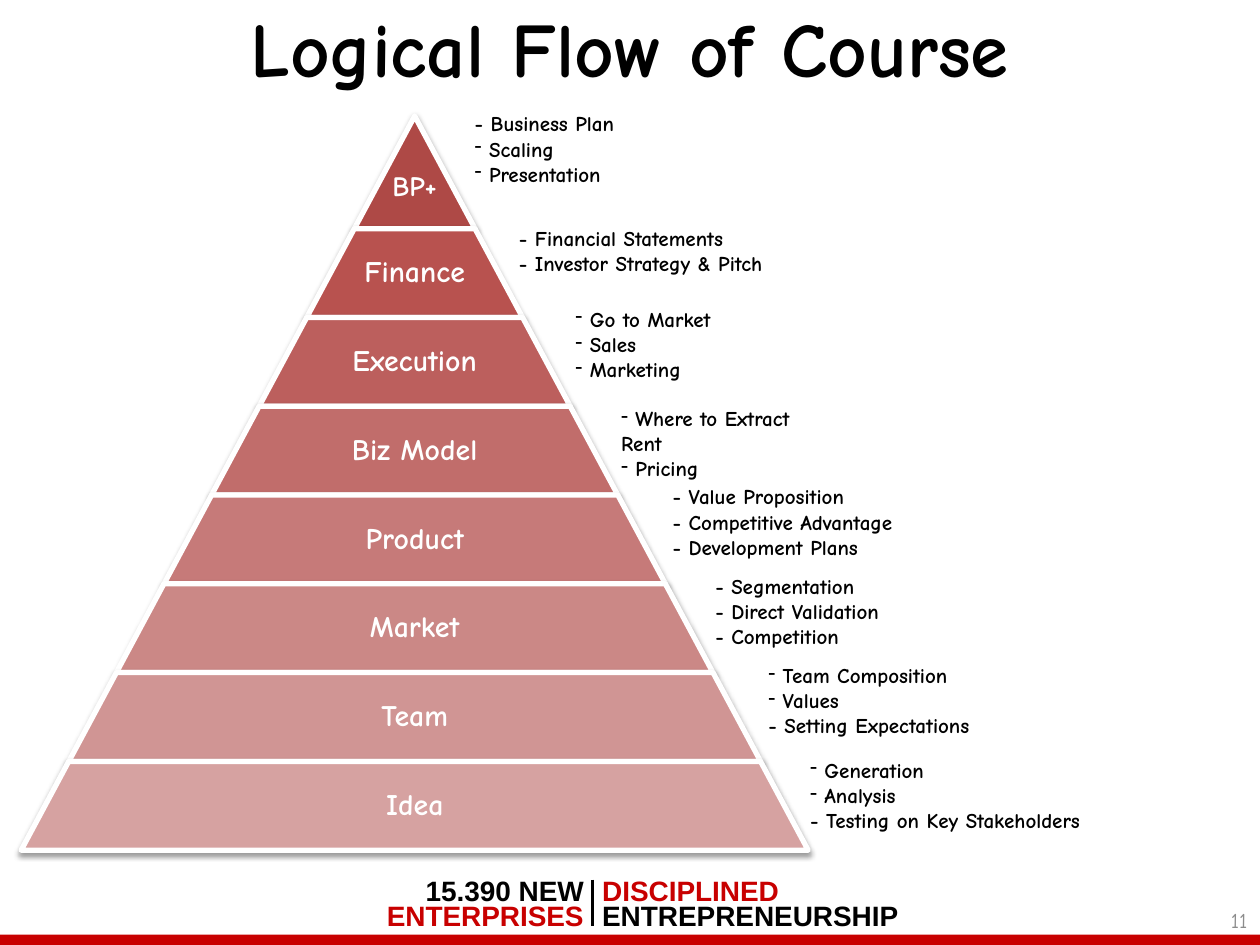
"""Build the course flow slide: a pyramid of eight stages with topic notes."""
import pptx
import pptx.dml.color
import pptx.enum.shapes
import pptx.enum.text
import pptx.oxml
import pptx.oxml.ns
import pptx.util
from lxml import etree

Cm = pptx.util.Cm
Pt = pptx.util.Pt
RGBColor = pptx.dml.color.RGBColor
Align = pptx.enum.text.PP_ALIGN
Anchor = pptx.enum.text.MSO_ANCHOR
Shape = pptx.enum.shapes.MSO_SHAPE
qn = pptx.oxml.ns.qn

BLACK = RGBColor(0x00, 0x00, 0x00)
WHITE = RGBColor(0xFF, 0xFF, 0xFF)
RED = RGBColor(0xC8, 0x00, 0x00)
GREY = RGBColor(0x8C, 0x8C, 0x8C)
TIER_COLORS = [
    RGBColor(0xAE, 0x49, 0x46), RGBColor(0xB8, 0x52, 0x4F),
    RGBColor(0xBC, 0x5F, 0x5D), RGBColor(0xC1, 0x6D, 0x6B),
    RGBColor(0xC6, 0x7A, 0x79), RGBColor(0xCB, 0x88, 0x86),
    RGBColor(0xD0, 0x95, 0x94), RGBColor(0xD6, 0xA2, 0xA1),
]

CENTER, APEX, TIP_HEIGHT, TIER_HEIGHT, SLOPE = 8.36, 2.34, 2.27, 1.79, 0.536

STAGES = [
    ("BP+", (9.32, 2.11, 3.86),
     ["- Business Plan", " Scaling", " Presentation"]),
    ("Finance", (10.21, 4.42, 6.15),
     ["- Financial Statements", "- Investor Strategy & Pitch"]),
    ("Execution", (11.35, 6.05, 5.08),
     [" Go to Market", " Sales", " Marketing"]),
    ("Biz Model", (12.27, 8.05, 4.65),
     [" Where to Extract Rent", " Pricing"]),
    ("Product", (13.31, 9.63, 8.05),
     ["- Value Proposition", "- Competitive Advantage", "- Development Plans"]),
    ("Market", (14.17, 11.43, 5.26),
     ["- Segmentation", "- Direct Validation", "- Competition"]),
    ("Team", (15.24, 13.23, 4.93),
     [" Team Composition", " Values", "- Setting Expectations"]),
    ("Idea", (16.08, 15.14, 6.55),
     [" Generation", " Analysis", "- Testing on Key Stakeholders"]),
]

FOOTER = [
    ("15.390 NEW", 7.42, 17.48, 4.6, Align.RIGHT, BLACK),
    ("ENTERPRISES", 7.42, 17.98, 4.6, Align.RIGHT, RED),
    ("DISCIPLINED", 11.89, 17.48, 6.78, Align.LEFT, RED),
    ("ENTREPRENEURSHIP", 11.89, 17.98, 6.78, Align.LEFT, BLACK),
]


def write(paragraph, text, size=12, color=BLACK, bold=True, font="Comic Neue",
          align=Align.LEFT, spacing=None):
    """Write text into a paragraph; a leading space calls for a dash bullet."""
    if text.startswith(" "):
        properties = paragraph._p.get_or_add_pPr()
        properties.set("marL", "0")
        properties.set("indent", "0")
        etree.SubElement(properties, qn("a:buChar")).set("char", "-")
    paragraph.alignment = align
    if spacing:
        paragraph.line_spacing = spacing
    run = paragraph.add_run()
    run.text = text
    run.font.name = font
    run.font.size = Pt(size)
    run.font.bold = bold
    run.font.color.rgb = color


class SlideBuilder:
    """Hold the current slide and draw its elements, with lengths in cm."""

    def __init__(self, slide):
        """Keep the slide to draw on."""
        self.slide = slide

    def title(self, text, left, top, width, height):
        """Place and fill the title placeholder."""
        shape = self.slide.shapes.title
        shape.left, shape.top = Cm(left), Cm(top)
        shape.width, shape.height = Cm(width), Cm(height)
        shape.text_frame.vertical_anchor = Anchor.MIDDLE
        write(shape.text_frame.paragraphs[0], text, size=44, align=Align.CENTER)

    def text(self, lines, left, top, width, height, anchor=Anchor.TOP,
             margin=None, **style):
        """Add a wrapping text box with one paragraph a line."""
        shape = self.slide.shapes.add_textbox(
            Cm(left), Cm(top), Cm(width), Cm(height))
        frame = shape.text_frame
        frame.word_wrap = True
        frame.vertical_anchor = anchor
        if margin is not None:
            frame.margin_left = frame.margin_right = Cm(margin)
            frame.margin_top = frame.margin_bottom = Cm(margin)
        for index, line in enumerate(lines):
            paragraph = frame.add_paragraph() if index else frame.paragraphs[0]
            write(paragraph, line, **style)

    def shape(self, kind, left, top, width, height, fill):
        """Add a filled shape without line or shadow."""
        shape = self.slide.shapes.add_shape(
            kind, Cm(left), Cm(top), Cm(width), Cm(height))
        shape.shadow.inherit = False
        shape.fill.solid()
        shape.fill.fore_color.rgb = fill
        shape.line.fill.background()
        return shape

    def tier(self, left, top, width, height, fill):
        """Add a white-edged trapezoid with a soft shadow below."""
        shape = self.shape(Shape.TRAPEZOID, left, top, width, height, fill)
        shape.adjustments[0] = SLOPE
        shape.line.color.rgb = WHITE
        shape.line.width = Pt(3)
        effects = shape._element.spPr.find(qn("a:effectLst"))
        shadow = etree.SubElement(
            effects, qn("a:outerShdw"), blurRad="40000", dist="20000",
            dir="5400000", rotWithShape="0")
        color = etree.SubElement(shadow, qn("a:srgbClr"), val="000000")
        etree.SubElement(color, qn("a:alpha"), val="38000")

    def line(self, start_x, start_y, end_x, end_y):
        """Add a plain black line."""
        connector = self.slide.shapes.add_connector(
            pptx.enum.shapes.MSO_CONNECTOR.STRAIGHT,
            Cm(start_x), Cm(start_y), Cm(end_x), Cm(end_y))
        connector.line.color.rgb = BLACK
        connector.line.width = Pt(1.5)
        etree.SubElement(connector._element.spPr, qn("a:effectLst"))


def draw_pyramid(builder):
    """Stack the tiers from the apex down, each with its label and notes."""
    top = APEX
    for index, (label, _, _) in enumerate(STAGES):
        height = TIER_HEIGHT if index else TIP_HEIGHT
        width = 2 * SLOPE * (top + height - APEX)
        builder.tier(CENTER - width / 2, top, width, height, TIER_COLORS[index])
        label_width = width * 0.65 if index else width
        drop = 0 if index else 0.6
        builder.text([label], CENTER - label_width / 2, top + drop, label_width,
                     height - drop, anchor=Anchor.MIDDLE, margin=0.05,
                     size=17 if index else 16, color=WHITE,
                     align=Align.CENTER, spacing=0.9)
        top += height
    for _, (left, note_top, width), notes in STAGES:
        builder.text(notes, left, note_top, width, 1.8)


def main():
    """Build and save the slide."""
    presentation = pptx.Presentation()
    presentation.slide_width, presentation.slide_height = Cm(25.4), Cm(19.05)
    slide = presentation.slides.add_slide(presentation.slide_layouts[5])
    builder = SlideBuilder(slide)
    builder.shape(Shape.RECTANGLE, 0, 18.84, 25.4, 0.21, RED)
    for text, left, top, width, align, color in FOOTER:
        builder.text([text], left, top, width, 0.94, size=16, font="Arial",
                     align=align, color=color)
    builder.line(11.94, 17.73, 11.94, 18.67)
    builder.title("Logical Flow of Course", 1.27, -0.64, 22.86, 3.18)
    builder.text(["11"], 19.48, 18.05, 5.92, 1, anchor=Anchor.MIDDLE,
                 color=GREY, bold=False, align=Align.RIGHT)
    draw_pyramid(builder)
    presentation.save("out.pptx")


if __name__ == "__main__":
    main()
